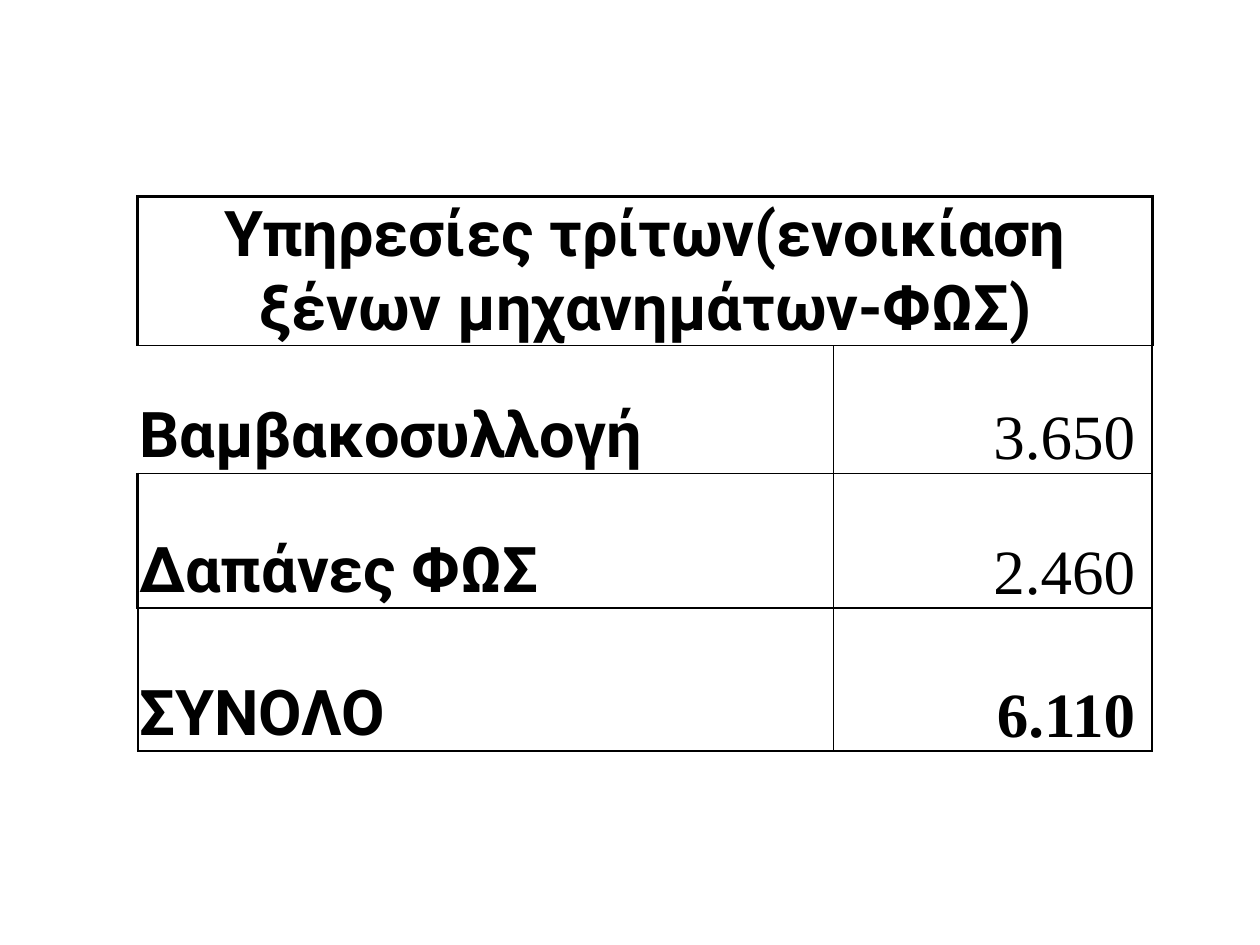
from typing import NamedTuple

from lxml.etree import SubElement
from pptx import Presentation
from pptx.dml.color import RGBColor
from pptx.enum.text import MSO_ANCHOR, PP_ALIGN
from pptx.oxml.ns import qn
from pptx.util import Cm, Pt

BLACK = "000000"
LABEL_FONT = "Roboto"
NUMBER_FONT = "Times New Roman"
THIN, MEDIUM, THICK = 0.5, 1.5, 2


class Borders(NamedTuple):
    """Line widths in points; None draws no line."""
    left: float | None
    right: float | None
    top: float | None
    bottom: float | None


class Expense(NamedTuple):
    label: str
    amount: str
    left: float | None
    top: float
    bottom: float
    bold_amount: bool = False


TITLE = "Υπηρεσίες τρίτων(ενοικίαση ξένων μηχανημάτων-ΦΩΣ)"
EXPENSES = [
    Expense("Βαμβακοσυλλογή", "3.650 ", None, THIN, THIN),
    Expense("Δαπάνες ΦΩΣ", "2.460 ", THICK, THIN, MEDIUM),
    Expense("ΣΥΝΟΛΟ", "6.110 ", MEDIUM, MEDIUM, MEDIUM, bold_amount=True),
]
COLUMN_WIDTHS = [14.02, 6.43]
ROW_HEIGHTS = [2.72, 2.57, 2.73, 2.88]


def color(value: str) -> RGBColor:
    return RGBColor.from_string(value)


def write(cell, text: str, *, font: str = LABEL_FONT, bold: bool = True,
          align: PP_ALIGN = PP_ALIGN.LEFT) -> None:
    para = cell.text_frame.paragraphs[0]
    para.alignment = align
    span = para.add_run()
    span.text = text
    span.font.name = font
    span.font.size = Pt(36)
    span.font.bold = bold
    span.font.color.rgb = color(BLACK)


def format_cell(cell, borders: Borders) -> None:
    cell.vertical_anchor = MSO_ANCHOR.BOTTOM
    cell.margin_left = cell.margin_right = cell.margin_top = Cm(0.03)
    cell.margin_bottom = 0
    properties = cell._tc.get_or_add_tcPr()
    for tag, width in zip(("a:lnL", "a:lnR", "a:lnT", "a:lnB"), borders):
        line = SubElement(properties, qn(tag))
        if width is None:
            SubElement(line, qn("a:noFill"))
            continue
        line.set("w", str(Pt(width)))
        fill = SubElement(line, qn("a:solidFill"))
        SubElement(fill, qn("a:srgbClr")).set("val", BLACK)
    cell.fill.background()


def add_expense_table(page) -> None:
    frame = page.shapes.add_table(
        len(ROW_HEIGHTS), len(COLUMN_WIDTHS), Cm(2.78), Cm(3.96),
        Cm(sum(COLUMN_WIDTHS)), Cm(sum(ROW_HEIGHTS)))
    table = frame.table
    table.first_row = table.horz_banding = False
    for column, width in zip(table.columns, COLUMN_WIDTHS):
        column.width = Cm(width)
    for row, height in zip(table.rows, ROW_HEIGHTS):
        row.height = Cm(height)

    # Title across both columns
    title = table.cell(0, 0)
    title.merge(table.cell(0, 1))
    write(title, TITLE, align=PP_ALIGN.CENTER)
    format_cell(title, Borders(THICK, THICK, THICK, THIN))
    format_cell(table.cell(0, 1), Borders(None, THICK, THICK, THIN))

    # Expenses and their total
    for index, expense in enumerate(EXPENSES, start=1):
        label, amount = table.cell(index, 0), table.cell(index, 1)
        write(label, expense.label)
        write(amount, expense.amount, font=NUMBER_FONT,
              bold=expense.bold_amount, align=PP_ALIGN.RIGHT)
        format_cell(label, Borders(expense.left, THIN, expense.top, expense.bottom))
        format_cell(amount, Borders(THIN, MEDIUM, expense.top, expense.bottom))


def main() -> None:
    deck = Presentation()
    deck.slide_width, deck.slide_height = Cm(25.4), Cm(19.05)
    page = deck.slides.add_slide(deck.slide_layouts[6])
    add_expense_table(page)
    deck.save("out.pptx")


if __name__ == "__main__":
    main()
